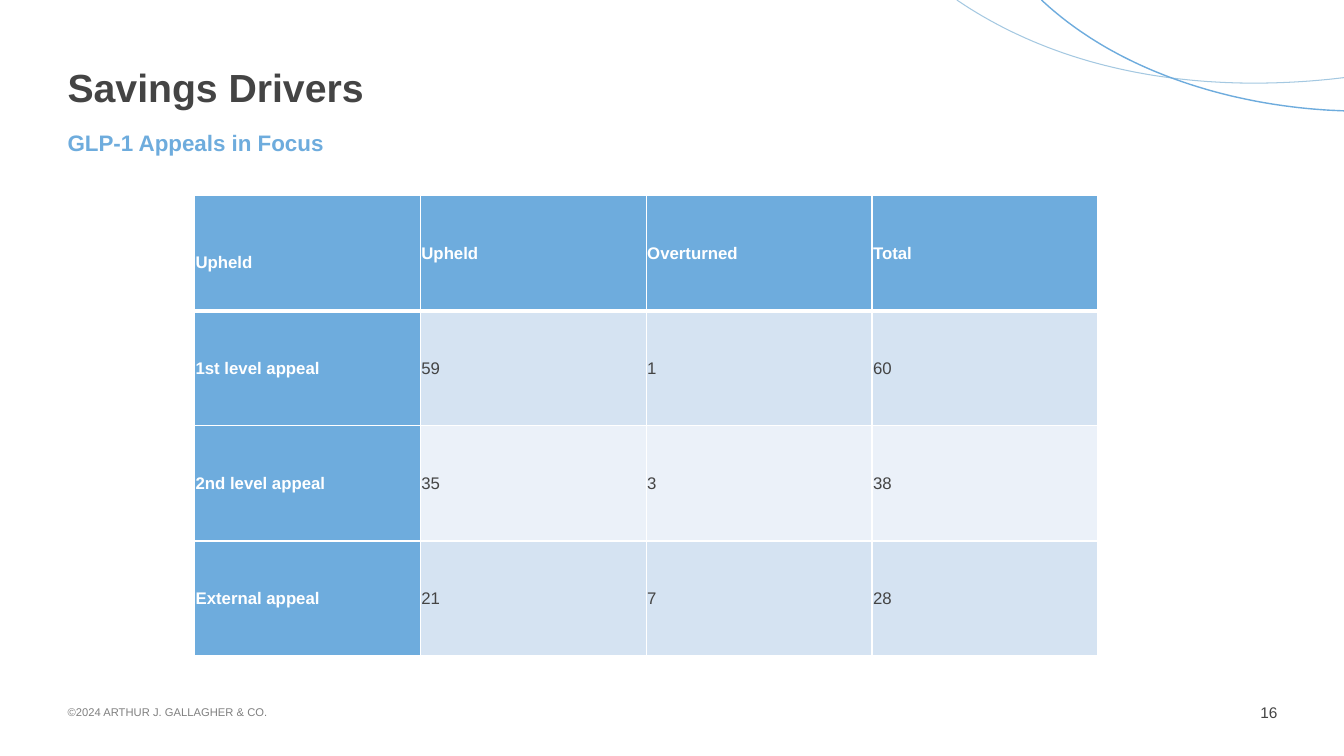
import pptx
import pptx.util
import pptx.dml.color
import pptx.enum.text
import pptx.oxml
import pptx.oxml.ns

Inches, Pt = pptx.util.Inches, pptx.util.Pt
ALIGN, ANCHOR = pptx.enum.text.PP_ALIGN, pptx.enum.text.MSO_ANCHOR

# Content
TITLE = "Savings Drivers"
SUBTITLE = "GLP-1 Appeals in Focus"
COPYRIGHT = "©2024 ARTHUR J. GALLAGHER & CO."
PAGE_NUMBER = "16"
APPEALS = [
    ("Upheld", "Upheld", "Overturned", "Total"),
    ("1st level appeal", "59", "1", "60"),
    ("2nd level appeal", "35", "3", "38"),
    ("External appeal", "21", "7", "28"),
]
# Corner curves: four Bezier points, line colour, line width
CURVES = [
    ([(13.33, 0.77), (12.43, 0.88), (10.83, 0.91), (9.49, 0)], "pale", 0.75),
    ([(13.33, 1.1), (12.34, 1.07), (11.14, 0.76), (10.33, 0)], "blue", 1),
]

THEME = {
    "font": "Arial",
    "colors": {"blue": "6EACDD", "pale": "A4C8E1", "dark": "444444",
               "gray": "808080", "white": "FFFFFF",
               "band": "D5E3F2", "band_light": "EBF1F9"},
    "sizes": {"title": 28, "subtitle": 16, "table": 12, "page": 11, "copyright": 8},
}


def color(name):
    return pptx.dml.color.RGBColor.from_string(THEME["colors"][name])


def style(paragraph, size, color_name, bold=False):
    for run in paragraph.runs:
        run.font.name = THEME["font"]
        run.font.size = Pt(THEME["sizes"][size])
        run.font.bold = bold
        run.font.color.rgb = color(color_name)


def add_text(slide, text, box, size, color_name, bold=False, wrap=True,
             align=ALIGN.LEFT, anchor=ANCHOR.TOP, line_spacing=None):
    frame = slide.shapes.add_textbox(*map(Inches, box)).text_frame
    frame.margin_left = frame.margin_top = frame.margin_right = frame.margin_bottom = 0
    frame.word_wrap = wrap
    frame.vertical_anchor = anchor
    frame.text = text
    paragraph = frame.paragraphs[0]
    paragraph.alignment = align
    paragraph.line_spacing = line_spacing
    style(paragraph, size, color_name, bold)


def add_curve(slide, controls, color_name, width, steps=60):
    points = []
    for step in range(steps + 1):
        t = step / steps
        weights = ((1 - t) ** 3, 3 * t * (1 - t) ** 2, 3 * t * t * (1 - t), t ** 3)
        points.append(tuple(Inches(sum(w * p[axis] for w, p in zip(weights, controls)))
                            for axis in (0, 1)))
    builder = slide.shapes.build_freeform(*points[0])
    builder.add_line_segments(points[1:], close=False)
    curve = builder.convert_to_shape()
    curve.shadow.inherit = False
    curve.fill.background()
    curve.line.color.rgb = color(color_name)
    curve.line.width = Pt(width)


def add_borders(cell, widths):
    properties = cell._tc.get_or_add_tcPr()
    for side in ("L", "R", "T", "B"):
        properties.append(pptx.oxml.parse_xml(
            f'<a:ln{side} {pptx.oxml.ns.nsdecls("a")} w="{Pt(widths.get(side, 1))}">'
            f'<a:solidFill><a:srgbClr val="{THEME["colors"]["white"]}"/></a:solidFill>'
            f'</a:ln{side}>'))


def add_appeals_table(slide):
    row_count, column_count = len(APPEALS), len(APPEALS[0])
    width, height = Inches(8.96), Inches(4.57)
    table = slide.shapes.add_table(row_count, column_count, Inches(1.93), Inches(1.94),
                                   width, height).table
    for column in table.columns:
        column.width = width // column_count
    for r, record in enumerate(APPEALS):
        table.rows[r].height = height // row_count
        for c, value in enumerate(record):
            cell = table.cell(r, c)
            is_header = r == 0 or c == 0
            # A thick rule separates the header row from the body
            add_borders(cell, {0: {"B": 3}, 1: {"T": 3}}.get(r, {}))
            cell.fill.solid()
            cell.fill.fore_color.rgb = color(
                "blue" if is_header else "band" if r % 2 else "band_light")
            cell.margin_left = cell.margin_right = cell.margin_bottom = Inches(0.01)
            # The corner label sits half a line lower than the other headers
            cell.margin_top = Inches(0.2 if r == c == 0 else 0.01)
            cell.vertical_anchor = ANCHOR.MIDDLE
            cell.text_frame.text = value
            style(cell.text_frame.paragraphs[0], "table",
                  "white" if is_header else "dark", is_header)


def main():
    deck = pptx.Presentation()
    deck.slide_width, deck.slide_height = Inches(13.33), Inches(7.5)
    slide = deck.slides.add_slide(deck.slide_layouts[6])

    # Corner decoration
    for controls, color_name, width in CURVES:
        add_curve(slide, controls, color_name, width)

    # Headings
    add_text(slide, TITLE, (0.67, 0.68, 10.22, 0.53), "title", "dark", bold=True,
             line_spacing=0.9)
    add_text(slide, SUBTITLE, (0.67, 1.28, 11.99, 0.59), "subtitle", "blue", bold=True)

    # Footer
    add_text(slide, COPYRIGHT, (0.67, 7, 2.01, 0.13), "copyright", "gray", wrap=False,
             anchor=ANCHOR.MIDDLE)
    add_text(slide, PAGE_NUMBER, (12.48, 6.98, 0.19, 0.19), "page", "dark", wrap=False,
             align=ALIGN.RIGHT)

    # Appeals table
    add_appeals_table(slide)
    deck.save("out.pptx")


if __name__ == "__main__":
    main()
